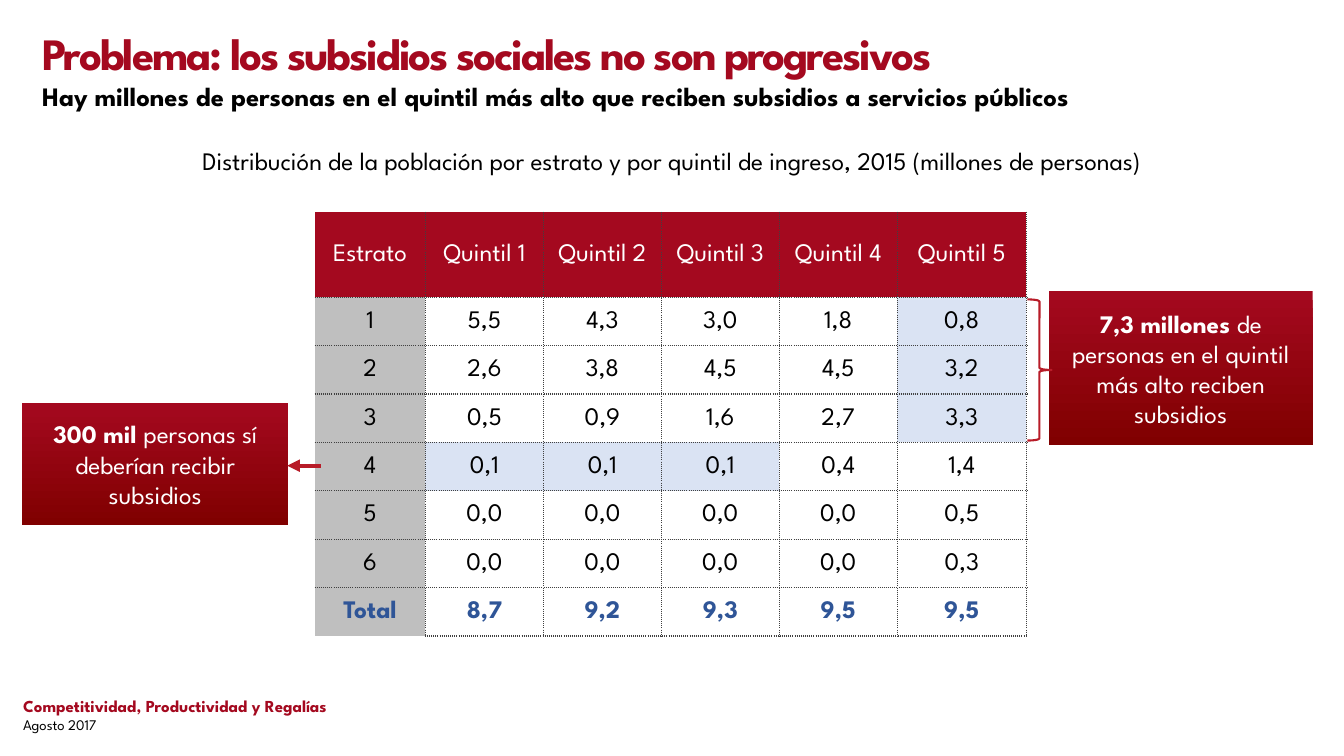
from lxml import etree
from pptx import Presentation
from pptx import util as u
from pptx.dml.color import RGBColor
from pptx.enum import shapes, text
from pptx.oxml import parse_xml
from pptx.oxml.ns import nsdecls, qn

FONT = "League Spartan"
RED = RGBColor(0xA4, 0x09, 0x1F)
DARK_RED = RGBColor(0x80, 0x00, 0x00)
LINE_RED = RGBColor(0xB8, 0x1C, 0x28)
BLUE = RGBColor(0x2F, 0x55, 0x97)
PALE_BLUE = RGBColor(0xDA, 0xE3, 0xF3)
GRAY = RGBColor(0xBF, 0xBF, 0xBF)
DOT_GRAY = RGBColor(0x40, 0x40, 0x40)
WHITE = RGBColor(0xFF, 0xFF, 0xFF)
BLACK = RGBColor(0, 0, 0)

WIDTH, HEIGHT = u.Inches(13.33), u.Inches(7.5)
CENTER = text.PP_ALIGN.CENTER
MIDDLE = text.MSO_ANCHOR.MIDDLE

COLUMN_SHARES = [1.1, 1.17, 1.17, 1.17, 1.17, 1.28]
ROW_SHARES = [0.85] + [0.48] * 7
ROWS = [
    ["Estrato"] + [f"Quintil {n}" for n in range(1, 6)],
    ["1", "5,5", "4,3", "3,0", "1,8", "0,8"],
    ["2", "2,6", "3,8", "4,5", "4,5", "3,2"],
    ["3", "0,5", "0,9", "1,6", "2,7", "3,3"],
    ["4", "0,1", "0,1", "0,1", "0,4", "1,4"],
    ["5", "0,0", "0,0", "0,0", "0,0", "0,5"],
    ["6", "0,0", "0,0", "0,0", "0,0", "0,3"],
    ["Total", "8,7", "9,2", "9,3", "9,5", "9,5"],
]
HIGHLIGHTS = {(1, 5), (2, 5), (3, 5), (4, 1), (4, 2), (4, 3)}


def area(left, top, width, height):
    """Turn percentages of the slide into a box in EMU."""
    return [u.Emu(round(share * side / 100)) for share, side in
            zip((left, top, width, height), (WIDTH, HEIGHT) * 2)]


def add_run(p, words, size=18, color=BLACK, bold=False):
    r = p.add_run()
    r.text = words
    values = {"name": FONT, "size": u.Pt(size), "bold": bold}
    for name, value in values.items():
        setattr(r.font, name, value)
    r.font.color.rgb = color
    return r


def add_text(s, box, words, align=None, **style):
    tf = s.shapes.add_textbox(*box).text_frame
    tf.word_wrap = True
    p = tf.paragraphs[0]
    p.alignment = align
    return tf, add_run(p, words, **style)


def add_heading(s, title_box, subtitle_box):
    _, r = add_text(s, title_box, "Problema: los subsidios sociales no son progresivos",
                    size=32, color=RED, bold=True)
    r.font._element.set("spc", "-150")
    tf, _ = add_text(s, subtitle_box,
                     "Hay millones de personas en el quintil más alto que reciben "
                     "subsidios a servicios públicos", size=19, bold=True)
    tf.paragraphs[0].line_spacing = 0.9


def add_footer(s, box):
    tf, _ = add_text(s, box, "Competitividad, Productividad y Regalías",
                     size=12, color=RED, bold=True)
    for side in ("left", "top", "right", "bottom"):
        setattr(tf, f"margin_{side}", u.Inches(0.1))
    add_run(tf.add_paragraph(), "Agosto 2017", size=10.5)


def add_border(cell, side, visible):
    paint = (f'<a:solidFill><a:srgbClr val="{DOT_GRAY}"/></a:solidFill>'
             '<a:prstDash val="sysDot"/>' if visible else "<a:noFill/>")
    cell._tc.get_or_add_tcPr().append(parse_xml(
        f'<a:ln{side} {nsdecls("a")} w="12700">{paint}</a:ln{side}>'))


def fill_cell(cell, row, col):
    last = row == len(ROWS) - 1
    borders = {"L": col > 0, "R": True, "T": row > 0, "B": not (last and col == 0)}
    for side, visible in borders.items():
        add_border(cell, side, visible)
    fill = (RED if row == 0 else GRAY if col == 0
            else PALE_BLUE if (row, col) in HIGHLIGHTS else None)
    if fill is None:
        cell.fill.background()
    else:
        cell.fill.solid()
        cell.fill.fore_color.rgb = fill
    values = {"vertical_anchor": MIDDLE, "margin_left": u.Inches(0.05),
              "margin_right": u.Inches(0.05), "margin_top": 0, "margin_bottom": 0}
    for name, value in values.items():
        setattr(cell, name, value)
    p = cell.text_frame.paragraphs[0]
    p.alignment, p.line_spacing = CENTER, 1.07
    color = WHITE if row == 0 else BLUE if last else BLACK
    add_run(p, ROWS[row][col], color=color, bold=last)


def add_population_table(s, box):
    table = s.shapes.add_table(len(ROWS), len(COLUMN_SHARES), *box).table
    table.horz_banding = False
    for column, share in zip(table.columns, COLUMN_SHARES):
        column.width = round(box[2] * share / sum(COLUMN_SHARES))
    for row, share in zip(table.rows, ROW_SHARES):
        row.height = round(box[3] * share / sum(ROW_SHARES))
    for row in range(len(ROWS)):
        for col in range(len(COLUMN_SHARES)):
            fill_cell(table.cell(row, col), row, col)


def add_callout(s, box, figure, words):
    sp = s.shapes.add_shape(shapes.MSO_SHAPE.RECTANGLE, *box)
    sp.shadow.inherit = False
    sp.line.fill.background()
    sp.fill.gradient()
    sp.fill.gradient_angle = 270
    for stop, color, position in zip(sp.fill.gradient_stops, (RED, DARK_RED), (0, 1)):
        stop.color.rgb = color
        stop.position = position
    tf = sp.text_frame
    tf.word_wrap, tf.vertical_anchor = True, MIDDLE
    p = tf.paragraphs[0]
    p.alignment = CENTER
    add_run(p, figure + " ", color=WHITE, bold=True)
    add_run(p, words, color=WHITE)


def add_brace(s, box):
    sp = s.shapes.add_shape(shapes.MSO_SHAPE.RIGHT_BRACE, *box)
    sp.shadow.inherit = False
    sp.fill.background()
    sp.line.color.rgb = LINE_RED
    sp.line.width = u.Pt(1.5)


def add_left_arrow(s, box):
    left, top, width, _ = box
    arrow = s.shapes.add_connector(shapes.MSO_CONNECTOR.STRAIGHT,
                                   left + width, top, left, top)
    arrow.line.color.rgb = LINE_RED
    arrow.line.width = u.Pt(3)
    etree.SubElement(arrow.line._get_or_add_ln(), qn("a:tailEnd"), type="triangle")
    etree.SubElement(arrow._element.spPr, qn("a:effectLst"))


def main():
    prs = Presentation()
    prs.slide_width, prs.slide_height = WIDTH, HEIGHT
    s = prs.slides.add_slide(prs.slide_layouts[6])
    add_footer(s, area(0.98, 90.67, 68.64, 7.33))
    add_heading(s, area(2.4, 2.8, 95.27, 8.13), area(2.4, 10.4, 95.27, 5.2))
    add_text(s, area(0, 18.53, 100, 5.33),
             "Distribución de la población por estrato y por quintil de ingreso, "
             "2015 (millones de personas)", align=CENTER)
    add_population_table(s, area(23.41, 28, 52.96, 56.13))
    add_callout(s, area(78.02, 38.53, 19.65, 20.4), "7,3 millones",
                "de personas en el quintil más alto reciben subsidios")
    add_callout(s, area(1.65, 53.33, 19.8, 16.13), "300 mil",
                "personas sí deberían recibir subsidios")
    add_brace(s, area(76.44, 39.6, 1.8, 18.67))
    add_left_arrow(s, area(21.38, 61.6, 2.48, 0))
    prs.save("out.pptx")


if __name__ == "__main__":
    main()
